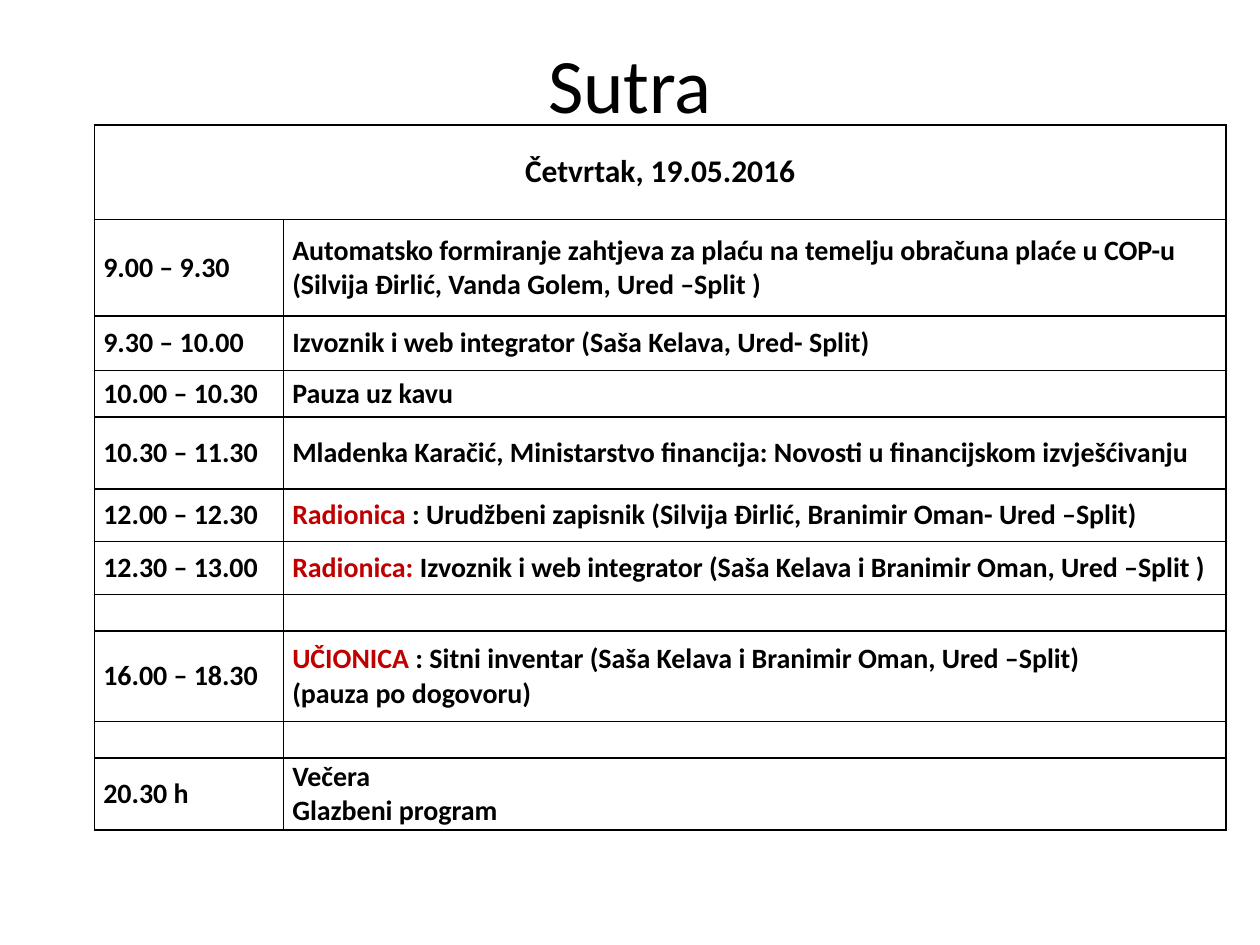
from lxml.etree import SubElement
from pptx import Presentation
from pptx.dml.color import RGBColor
from pptx.enum.text import MSO_ANCHOR as Anchor, PP_ALIGN as Align
from pptx.oxml.ns import qn
from pptx.util import Inches, Pt

BLACK, RED = "000000", "C00000"
COLUMN_WIDTHS = [1.5, 7.48]
HEADING = "Četvrtak, 19.05.2016"
SCHEDULE = [
    (0.77, "9.00 – 9.30", "", [
        "Automatsko formiranje zahtjeva za plaću na temelju obračuna plaće u COP-u",
        "(Silvija Đirlić, Vanda Golem, Ured –Split )"]),
    (0.43, "9.30 – 10.00", "", ["Izvoznik i web integrator (Saša Kelava, Ured- Split)"]),
    (0.37, "10.00 – 10.30", "", ["Pauza uz kavu"]),
    (0.57, "10.30 – 11.30", "", [
        "Mladenka Karačić, Ministarstvo financija: Novosti u financijskom izvješćivanju"]),
    (0.42, "12.00 – 12.30", "Radionica ", [
        ": Urudžbeni zapisnik (Silvija Đirlić, Branimir Oman- Ured –Split)"]),
    (0.42, "12.30 – 13.00", "Radionica:", [
        " Izvoznik i web integrator (Saša Kelava i Branimir Oman, Ured –Split )"]),
    (0.29, "", "", [""]),
    (0.72, "16.00 – 18.30", "UČIONICA", [
        " : Sitni inventar (Saša Kelava i Branimir Oman, Ured –Split)",
        "(pauza po dogovoru)"]),
    (0.29, "", "", [""]),
    (0.57, "20.30 h", "", ["Večera", "Glazbeni program"]),
]


def color(hex_code):
    """Turn a hex string into a colour."""
    return RGBColor.from_string(hex_code)


def write(frame, lines, size, bold=True, align=Align.LEFT, label=""):
    """Write lines as paragraphs, the first led by an optional red label."""
    for index, line in enumerate(lines):
        para = frame.paragraphs[0] if index == 0 else frame.add_paragraph()
        para.alignment = align
        para.font.name, para.font.size, para.font.bold = "Calibri", Pt(size), bold
        para.font.color.rgb = color(BLACK)
        if label and index == 0:
            span = para.add_run()
            span.text = label
            span.font.color.rgb = color(RED)
        if line:
            span = para.add_run()
            span.text = line
            span.font.color.rgb = color(BLACK)


def style_cell(cell):
    """Give a cell thin black borders, tight margins and no fill."""
    cell.margin_left = cell.margin_right = Inches(0.07)
    cell.margin_top = cell.margin_bottom = 0
    cell.vertical_anchor = Anchor.MIDDLE
    properties = cell._tc.get_or_add_tcPr()
    for side in ("a:lnL", "a:lnR", "a:lnT", "a:lnB"):
        border = SubElement(properties, qn(side), w=str(Pt(1)))
        fill = SubElement(border, qn("a:solidFill"))
        SubElement(fill, qn("a:srgbClr"), val=BLACK)
    cell.fill.background()


def add_title(slide, text):
    """Add the centred slide title."""
    box = slide.shapes.add_textbox(Inches(0.5), Inches(0.08), Inches(9), Inches(1.15))
    frame = box.text_frame
    frame.word_wrap = True
    frame.vertical_anchor = Anchor.MIDDLE
    write(frame, [text], 44, bold=False, align=Align.CENTER)


def add_schedule(slide):
    """Add the timetable under a merged date heading."""
    heights = [0.75] + [entry[0] for entry in SCHEDULE]
    table = slide.shapes.add_table(
        len(heights), len(COLUMN_WIDTHS), Inches(0.75), Inches(0.99),
        Inches(sum(COLUMN_WIDTHS)), Inches(sum(heights))).table
    table.first_row = table.horz_banding = False
    for column, width in zip(table.columns, COLUMN_WIDTHS):
        column.width = Inches(width)
    for row, height in zip(table.rows, heights):
        row.height = Inches(height)
    for cell in table.iter_cells():
        style_cell(cell)
    table.cell(0, 0).merge(table.cell(0, 1))
    write(table.cell(0, 0).text_frame, [HEADING], 18, align=Align.CENTER)
    for row, (_, time, label, lines) in enumerate(SCHEDULE, 1):
        write(table.cell(row, 0).text_frame, [time], 16)
        write(table.cell(row, 1).text_frame, lines, 16, label=label)


def main():
    """Build and save the slide."""
    deck = Presentation()
    deck.slide_width, deck.slide_height = Inches(10), Inches(7.5)
    slide = deck.slides.add_slide(deck.slide_layouts[6])
    add_title(slide, "Sutra")
    add_schedule(slide)
    deck.save("out.pptx")


if __name__ == "__main__":
    main()
